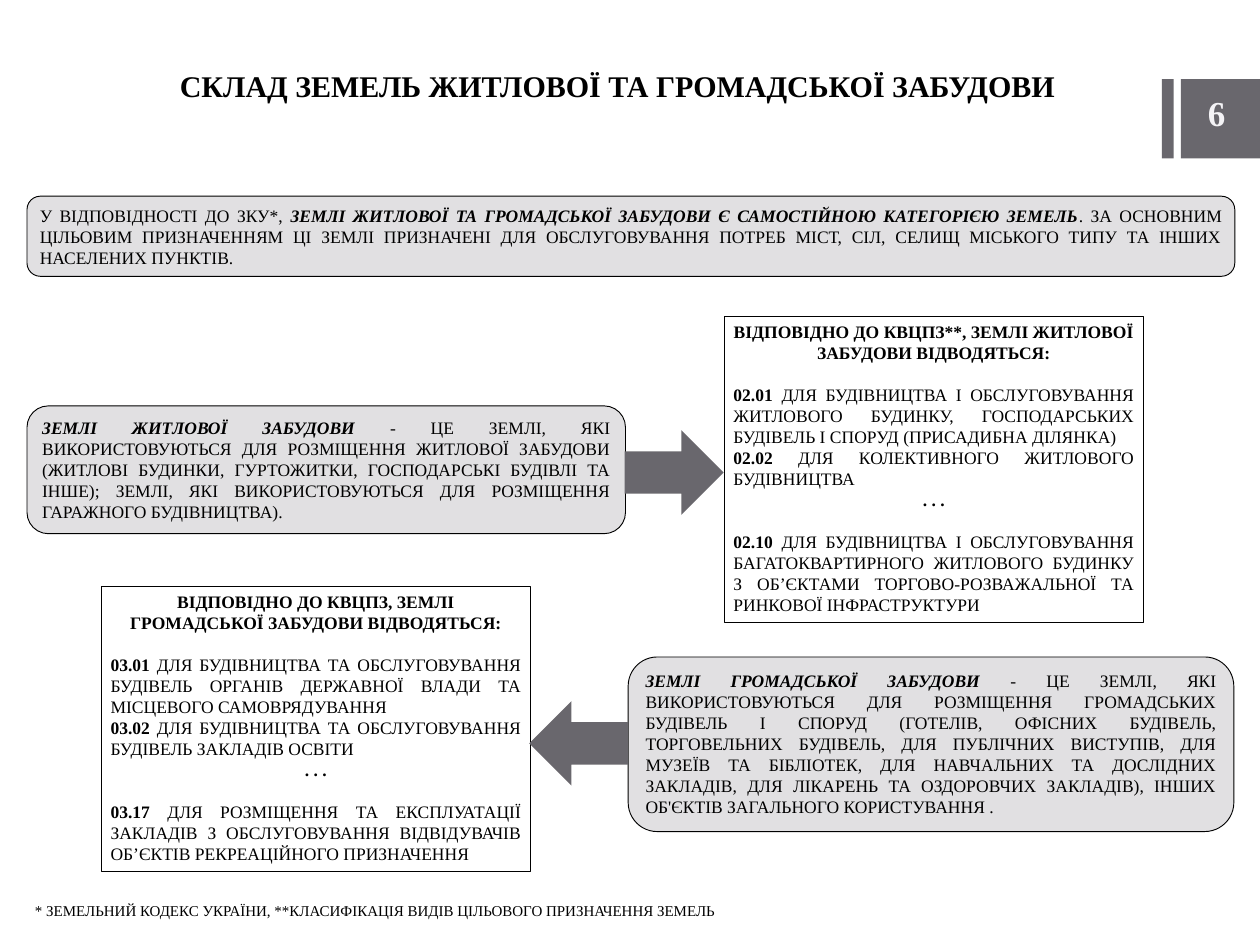
import pptx
import pptx.util
import pptx.dml.color
import pptx.enum.shapes
import pptx.enum.text

Inches = pptx.util.Inches
Pt = pptx.util.Pt
SHAPE = pptx.enum.shapes.MSO_SHAPE
ALIGN = pptx.enum.text.PP_ALIGN
ANCHOR = pptx.enum.text.MSO_ANCHOR

GREY, PALE, BLACK, NEAR_WHITE = "69676D", "E1E0E2", "000000", "F4F3F6"
LINE_GAP = 16.8  # one line of 14 pt text


def color(hex_string):
    return pptx.dml.color.RGBColor.from_string(hex_string)


class SlideBuilder:
    font = "Times New Roman"
    size = 14

    def __init__(self, s):
        self.s = s

    def add_text(self, sp, paragraphs, size=None, rgb=BLACK, inset=(0.1, 0.05), anchor=ANCHOR.TOP):
        """Each paragraph is (alignment, space after, [(text, style), ...])."""
        tf = sp.text_frame
        x, y = map(Inches, inset)
        frame = {"word_wrap": True, "vertical_anchor": anchor, "margin_left": x,
                 "margin_right": x, "margin_top": y, "margin_bottom": y}
        for name, value in frame.items():
            setattr(tf, name, value)
        for i, (align, after, runs) in enumerate(paragraphs):
            p = tf.add_paragraph() if i else tf.paragraphs[0]
            p.alignment = align
            p.space_after = Pt(after)
            for text, style in runs:
                r = p.add_run()
                r.text = text
                fmt = {"name": self.font, "size": Pt(size or self.size),
                       "bold": "b" in style, "italic": "i" in style}
                for name, value in fmt.items():
                    setattr(r.font, name, value)
                r.font.color.rgb = color(rgb)

    def shape(self, kind, at, fill=None, line=None):
        sp = self.s.shapes.add_shape(kind, *map(Inches, at))
        sp.shadow.inherit = False
        if fill:
            sp.fill.solid()
            sp.fill.fore_color.rgb = color(fill)
        else:
            sp.fill.background()
        if line:
            sp.line.color.rgb = color(line)
            sp.line.width = Pt(0.75)
        else:
            sp.line.fill.background()
        return sp

    def label(self, at, text, size, align=ALIGN.LEFT, style="", **options):
        sp = self.s.shapes.add_textbox(*map(Inches, at))
        self.add_text(sp, [(align, 0, [(text, style)])], size, **options)

    def definition(self, at, runs):
        sp = self.shape(SHAPE.ROUNDED_RECTANGLE, at, PALE, BLACK)
        self.add_text(sp, [(ALIGN.JUSTIFY, 0, runs)])

    def code_list(self, at, heading, items):
        first, second, last = [
            (ALIGN.JUSTIFY, 0, [(code + " ", "b"), (text, "")]) for code, text in items]
        sp = self.shape(SHAPE.RECTANGLE, at, line=BLACK)
        self.add_text(sp, [(ALIGN.CENTER, LINE_GAP, [(heading, "b")]), first, second,
                           (ALIGN.CENTER, LINE_GAP, [(". . .", "b")]), last])


def main():
    prs = pptx.Presentation()
    prs.slide_width, prs.slide_height = Inches(14), Inches(10.5)
    b = SlideBuilder(prs.slides.add_slide(prs.slide_layouts[6]))

    # Page number tab
    for left, width in ((12.91, 0.13), (13.12, 0.88)):
        b.shape(SHAPE.RECTANGLE, (left, 0.88, width, 0.88), GREY)
    b.label((13.28, 0.95, 1.27, 0.61), "6", 28, style="b", rgb=NEAR_WHITE, inset=(0.14, 0.07))

    # Title and footnote
    b.label((1.26, 0.51, 11.2, 0.71), "СКЛАД ЗЕМЕЛЬ ЖИТЛОВОЇ ТА ГРОМАДСЬКОЇ ЗАБУДОВИ", 24,
            ALIGN.CENTER, "b", inset=(0.14, 0.07), anchor=ANCHOR.BOTTOM)
    b.label((0.29, 9.97, 8.68, 0.3),
            "* ЗЕМЕЛЬНИЙ КОДЕКС УКРАЇНИ, **КЛАСИФІКАЦІЯ ВИДІВ ЦІЛЬОВОГО ПРИЗНАЧЕННЯ ЗЕМЕЛЬ", 12)

    # Definitions
    b.definition((0.3, 2.18, 13.42, 0.89), [
        ("У ВІДПОВІДНОСТІ ДО ЗКУ*, ", ""),
        ("ЗЕМЛІ ЖИТЛОВОЇ ТА ГРОМАДСЬКОЇ ЗАБУДОВИ Є САМОСТІЙНОЮ КАТЕГОРІЄЮ ЗЕМЕЛЬ", "bi"),
        (". ЗА ОСНОВНИМ ЦІЛЬОВИМ ПРИЗНАЧЕННЯМ ЦІ ЗЕМЛІ ПРИЗНАЧЕНІ ДЛЯ ОБСЛУГОВУВАННЯ "
         "ПОТРЕБ МІСТ, СІЛ, СЕЛИЩ МІСЬКОГО ТИПУ ТА ІНШИХ НАСЕЛЕНИХ ПУНКТІВ.", "")])
    b.definition((0.3, 4.51, 6.65, 1.42), [
        ("ЗЕМЛІ ЖИТЛОВОЇ ЗАБУДОВИ ", "bi"),
        ("- ЦЕ ЗЕМЛІ, ЯКІ ВИКОРИСТОВУЮТЬСЯ ДЛЯ РОЗМІЩЕННЯ ЖИТЛОВОЇ ЗАБУДОВИ (ЖИТЛОВІ "
         "БУДИНКИ, ГУРТОЖИТКИ, ГОСПОДАРСЬКІ БУДІВЛІ ТА ІНШЕ); ЗЕМЛІ, ЯКІ "
         "ВИКОРИСТОВУЮТЬСЯ ДЛЯ РОЗМІЩЕННЯ ГАРАЖНОГО БУДІВНИЦТВА).", "")])
    b.definition((6.98, 7.3, 6.73, 1.94), [
        ("ЗЕМЛІ ГРОМАДСЬКОЇ ЗАБУДОВИ ", "bi"),
        ("- ЦЕ ЗЕМЛІ, ЯКІ ВИКОРИСТОВУЮТЬСЯ ДЛЯ РОЗМІЩЕННЯ ГРОМАДСЬКИХ БУДІВЕЛЬ І СПОРУД "
         "(ГОТЕЛІВ, ОФІСНИХ БУДІВЕЛЬ, ТОРГОВЕЛЬНИХ БУДІВЕЛЬ, ДЛЯ ПУБЛІЧНИХ ВИСТУПІВ, ДЛЯ "
         "МУЗЕЇВ ТА БІБЛІОТЕК, ДЛЯ НАВЧАЛЬНИХ ТА ДОСЛІДНИХ ЗАКЛАДІВ, ДЛЯ ЛІКАРЕНЬ ТА "
         "ОЗДОРОВЧИХ ЗАКЛАДІВ), ІНШИХ ОБ'ЄКТІВ ЗАГАЛЬНОГО КОРИСТУВАННЯ .", "")])

    # Land-use code lists
    b.code_list((8.05, 3.52, 4.65, 3.4),
                "ВІДПОВІДНО ДО КВЦПЗ**, ЗЕМЛІ ЖИТЛОВОЇ ЗАБУДОВИ ВІДВОДЯТЬСЯ:", [
        ("02.01", "ДЛЯ БУДІВНИЦТВА І ОБСЛУГОВУВАННЯ ЖИТЛОВОГО БУДИНКУ, ГОСПОДАРСЬКИХ "
                  "БУДІВЕЛЬ І СПОРУД (ПРИСАДИБНА ДІЛЯНКА)"),
        ("02.02", "ДЛЯ КОЛЕКТИВНОГО ЖИТЛОВОГО БУДІВНИЦТВА"),
        ("02.10", "ДЛЯ БУДІВНИЦТВА І ОБСЛУГОВУВАННЯ БАГАТОКВАРТИРНОГО ЖИТЛОВОГО БУДИНКУ З "
                  "ОБ’ЄКТАМИ ТОРГОВО-РОЗВАЖАЛЬНОЇ ТА РИНКОВОЇ ІНФРАСТРУКТУРИ")])
    b.code_list((1.13, 6.52, 4.76, 3.16),
                "ВІДПОВІДНО ДО КВЦПЗ, ЗЕМЛІ ГРОМАДСЬКОЇ ЗАБУДОВИ ВІДВОДЯТЬСЯ:", [
        ("03.01", "ДЛЯ БУДІВНИЦТВА ТА ОБСЛУГОВУВАННЯ БУДІВЕЛЬ ОРГАНІВ ДЕРЖАВНОЇ ВЛАДИ ТА "
                  "МІСЦЕВОГО САМОВРЯДУВАННЯ"),
        ("03.02", "ДЛЯ БУДІВНИЦТВА ТА ОБСЛУГОВУВАННЯ БУДІВЕЛЬ ЗАКЛАДІВ ОСВІТИ"),
        ("03.17", "ДЛЯ РОЗМІЩЕННЯ ТА ЕКСПЛУАТАЦІЇ ЗАКЛАДІВ З ОБСЛУГОВУВАННЯ ВІДВІДУВАЧІВ "
                  "ОБ’ЄКТІВ РЕКРЕАЦІЙНОГО ПРИЗНАЧЕННЯ")])

    # Block arrows from each definition to its codes
    b.shape(SHAPE.RIGHT_ARROW, (6.94, 4.78, 1.1, 0.94), GREY)
    b.shape(SHAPE.LEFT_ARROW, (5.88, 7.79, 1.1, 0.94), GREY)

    prs.save("out.pptx")


if __name__ == "__main__":
    main()
